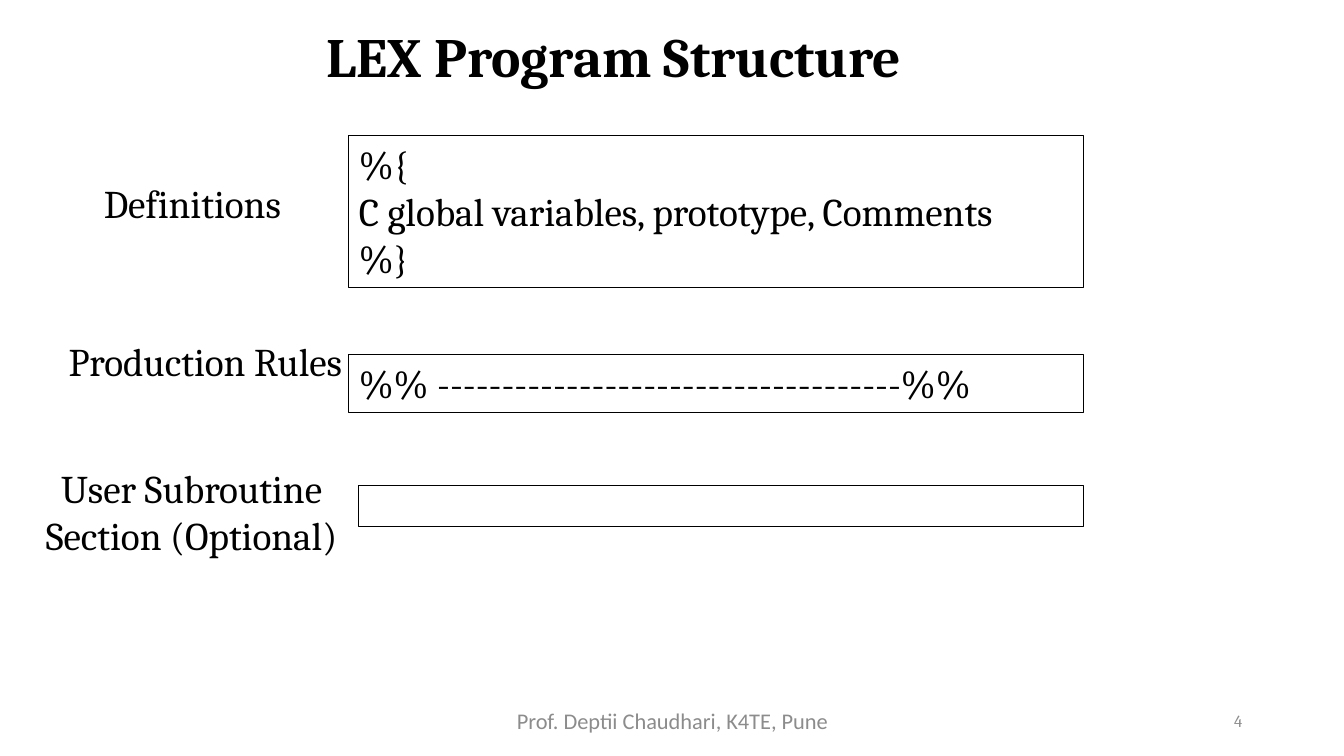
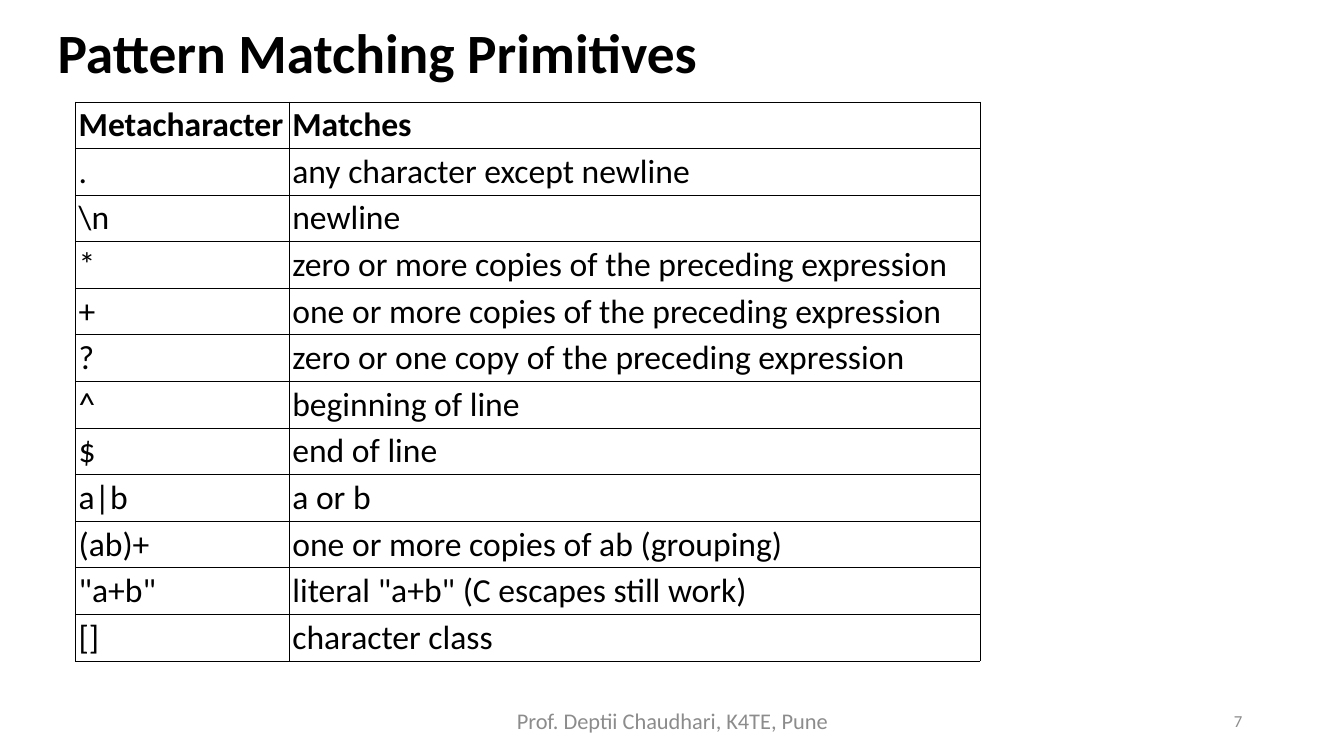
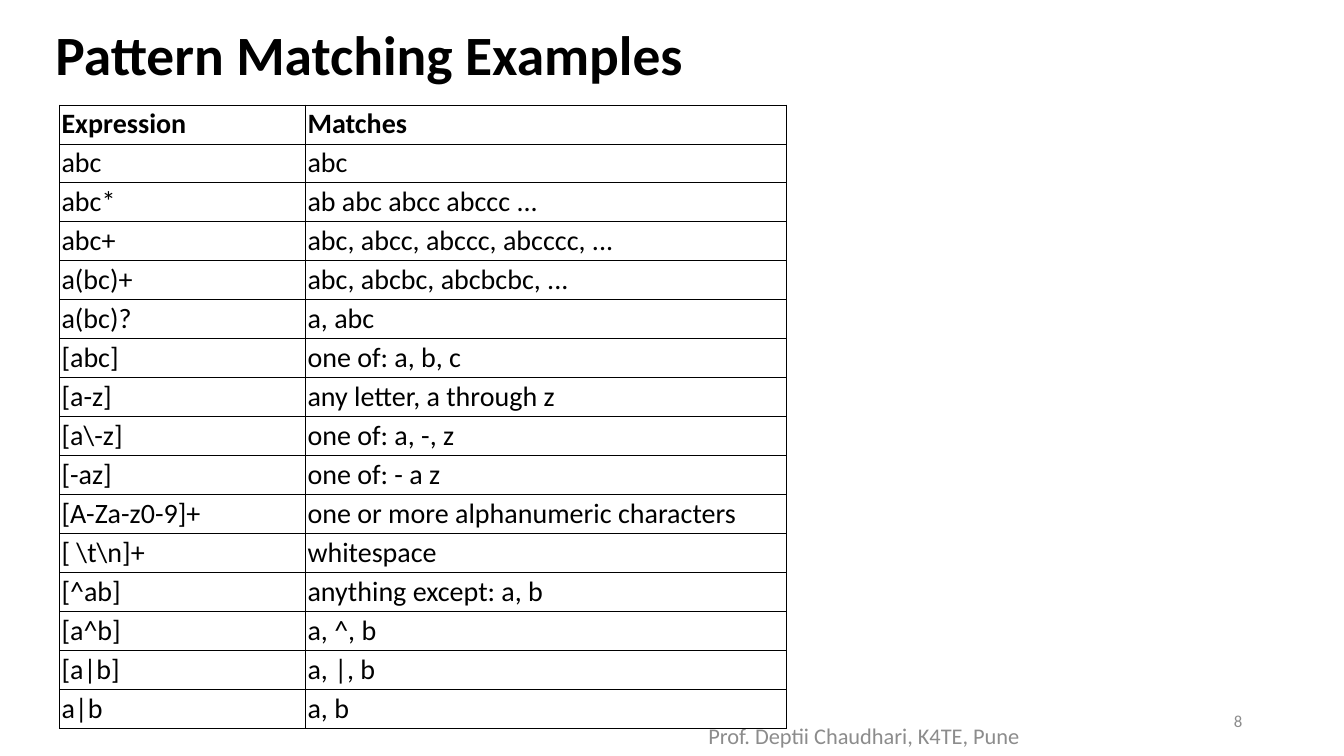
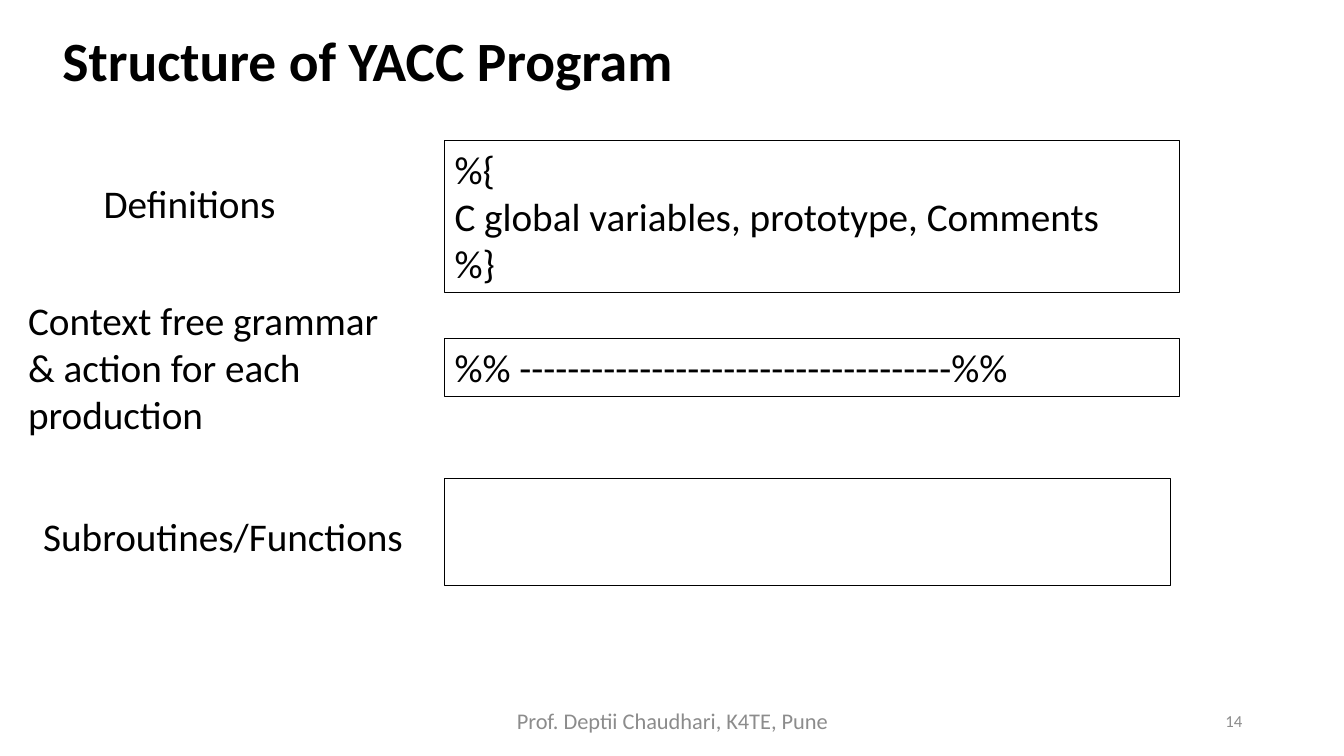
from lxml import etree
from pptx import Presentation
from pptx.dml.color import RGBColor
from pptx.enum.shapes import MSO_SHAPE
from pptx.enum.text import MSO_ANCHOR, MSO_AUTO_SIZE, PP_ALIGN
from pptx.oxml.ns import qn
from pptx.util import Inches, Pt

RECT = MSO_SHAPE.RECTANGLE
TOP, MIDDLE = MSO_ANCHOR.TOP, MSO_ANCHOR.MIDDLE
NO_FIT = MSO_AUTO_SIZE.NONE
LEFT, CENTER, RIGHT = PP_ALIGN.LEFT, PP_ALIGN.CENTER, PP_ALIGN.RIGHT

BLACK, WHITE, GRAY = "000000", "FFFFFF", "8C8C8C"
SANS, SERIF = "Calibri", "Cambria"
FOOTER = "Prof. Deptii Chaudhari, K4TE, Pune"
FOOTER_BOX = (33.16, 92.67, 33.75, 5.33)
LOW_FOOTER_BOX = (47.41, 94.67, 33.75, 5.33)
NUMBER_BOX = (70.67, 92.67, 22.5, 5.33)

DEFINITIONS = ["%{", "C global variables, prototype, Comments", "%}"]
RULES = ["%% ------------------------------------%%"]

LEX_SECTIONS = [
    ("Definitions", (5.76, 8.67, 27.64, 12.67), LEFT,
     DEFINITIONS, (30.04, 0, 69.96, 33.56)),
    ("Production Rules", (1.73, 43.56, 29.27, 23.11), CENTER,
     RULES, (30.04, 48.44, 69.96, 12.67)),
    ("User Subroutine Section (Optional)", (0, 71.56, 30.13, 28.44), CENTER,
     [], (31, 77.33, 69, 8.89)),
]

YACC_SECTIONS = [
    ("Definitions", (6.51, 7.69, 25, 12.9), LEFT,
     DEFINITIONS, (36.72, 0, 63.28, 34.16)),
    ("Context free grammar & action for each production",
     (0, 33.94, 33.68, 34.16), LEFT,
     RULES, (36.72, 44.57, 63.28, 12.9)),
    ("Subroutines/Functions", (1.3, 82.35, 32.99, 12.9), LEFT,
     [], (36.72, 76.02, 62.5, 23.98)),
]

PRIMITIVES = [
    ("Metacharacter", "Matches"),
    (".", "any character except newline"),
    (r"\n", "newline"),
    ("*", "zero or more copies of the preceding expression"),
    ("+", "one or more copies of the preceding expression"),
    ("?", "zero or one copy of the preceding expression"),
    ("^", "beginning of line"),
    ("$", "end of line"),
    ("a|b", "a or b"),
    ("(ab)+", "one or more copies of ab (grouping)"),
    ('"a+b"', 'literal "a+b" (C escapes still work)'),
    ("[]", "character class"),
]

EXAMPLES = [
    ("Expression", "Matches"),
    ("abc", "abc"),
    ("abc*", "ab abc abcc abccc ..."),
    ("abc+", "abc, abcc, abccc, abcccc, ..."),
    ("a(bc)+", "abc, abcbc, abcbcbc, ..."),
    ("a(bc)?", "a, abc"),
    ("[abc]", "one of: a, b, c"),
    ("[a-z]", "any letter, a through z"),
    (r"[a\-z]", "one of: a, -, z"),
    ("[-az]", "one of: - a z"),
    ("[A-Za-z0-9]+", "one or more alphanumeric characters"),
    (r"[ \t\n]+", "whitespace"),
    ("[^ab]", "anything except: a, b"),
    ("[a^b]", "a, ^, b"),
    ("[a|b]", "a, |, b"),
    ("a|b", "a, b"),
]

prs = Presentation()
prs.slide_width, prs.slide_height = Inches(13.33), Inches(7.5)
SLIDE = (0, 0, prs.slide_width, prs.slide_height)


def rgb(value):
    return RGBColor.from_string(value)


def inside(box, percents):
    left, top, width, height = box
    x, y, w, h = percents
    return (left + int(width * x / 100), top + int(height * y / 100),
            int(width * w / 100), int(height * h / 100))


def write(tf, lines, size, font, color=BLACK, align=LEFT, anchor=TOP, bold=False):
    tf.word_wrap = True
    tf.vertical_anchor = anchor
    tf.text = "\n".join(lines)
    for p in tf.paragraphs:
        p.alignment = align
        p.font.size, p.font.name, p.font.bold = Pt(size), font, bold
        p.font.color.rgb = rgb(color)


def add_text(s, box, text, size, font, **style):
    write(s.shapes.add_textbox(*box).text_frame, [text], size, font, **style)


def add_slide(title, title_box, number, font=SANS, align=LEFT, footer_box=FOOTER_BOX):
    s = prs.slides.add_slide(prs.slide_layouts[5])
    sp = s.shapes.title
    sp.left, sp.top, sp.width, sp.height = inside(SLIDE, title_box)
    tf = sp.text_frame
    write(tf, [title], 39.6, font, align=align, anchor=MIDDLE, bold=True)
    tf.auto_size = NO_FIT
    tf.paragraphs[0].line_spacing = 0.9
    add_text(s, inside(SLIDE, NUMBER_BOX), str(number), 12, font,
             color=GRAY, align=RIGHT, anchor=MIDDLE)
    add_text(s, inside(SLIDE, footer_box), FOOTER, 16, SANS,
             color=GRAY, align=CENTER, anchor=MIDDLE)
    return s


def add_structure(s, box, sections, font):
    for label, label_box, align, code, code_box in sections:
        add_text(s, inside(box, label_box), label, 28, font, align=align)
        sp = s.shapes.add_shape(RECT, *inside(box, code_box))
        sp.shadow.inherit = False
        sp.fill.background()
        sp.line.color.rgb = rgb(BLACK)
        sp.line.width = Pt(0.75)
        if code:
            write(sp.text_frame, code, 28, font)


def add_borders(cell):
    tc_pr = cell._tc.get_or_add_tcPr()
    for i, side in enumerate(("lnL", "lnR", "lnT", "lnB")):
        ln = etree.Element(qn(f"a:{side}"), w=str(Pt(0.5)))
        fill = etree.SubElement(ln, qn("a:solidFill"))
        etree.SubElement(fill, qn("a:srgbClr"), val=BLACK)
        tc_pr.insert(i, ln)


def add_grid(s, box, rows, first_share, size, inset):
    left, top, width, height = box
    table = s.shapes.add_table(len(rows), 2, left, top, width, height).table
    table.first_row = table.horz_banding = False
    table.columns[0].width = int(width * first_share / 100)
    table.columns[1].width = width - table.columns[0].width
    for i, row in enumerate(rows):
        for j, text in enumerate(row):
            cell = table.cell(i, j)
            cell.margin_left = cell.margin_right = Inches(inset)
            cell.margin_top = cell.margin_bottom = Inches(inset)
            cell.vertical_anchor = MIDDLE
            cell.fill.solid()
            cell.fill.fore_color.rgb = rgb(WHITE)
            add_borders(cell)
            p = cell.text_frame.paragraphs[0]
            p.text = text
            p.font.size, p.font.name, p.font.bold = Pt(size), SANS, i == 0
            p.font.color.rgb = rgb(BLACK)


def main():
    s = add_slide("LEX Program Structure", (2.55, 3.47, 86.27, 8.8), 4, SERIF, CENTER)
    add_structure(s, inside(SLIDE, (2.48, 17.87, 78.17, 60)), LEX_SECTIONS, SERIF)

    s = add_slide("Pattern Matching Primitives", (3.53, 2.8, 86.27, 9.07), 7)
    add_grid(s, inside(SLIDE, (5.63, 13.47, 67.29, 74)), PRIMITIVES, 23.63, 24, 0.03)

    s = add_slide("Pattern Matching Examples", (3.38, 3.33, 86.27, 8.67), 8,
                  footer_box=LOW_FOOTER_BOX)
    add_grid(s, inside(SLIDE, (4.43, 13.87, 54.09, 82.53)), EXAMPLES, 33.84, 20, 0.02)

    s = add_slide("Structure of YACC Program", (3.9, 3.87, 86.27, 9.2), 14)
    add_structure(s, inside(SLIDE, (1.35, 18.53, 86.42, 58.93)), YACC_SECTIONS, SANS)

    prs.save("out.pptx")


if __name__ == "__main__":
    main()
